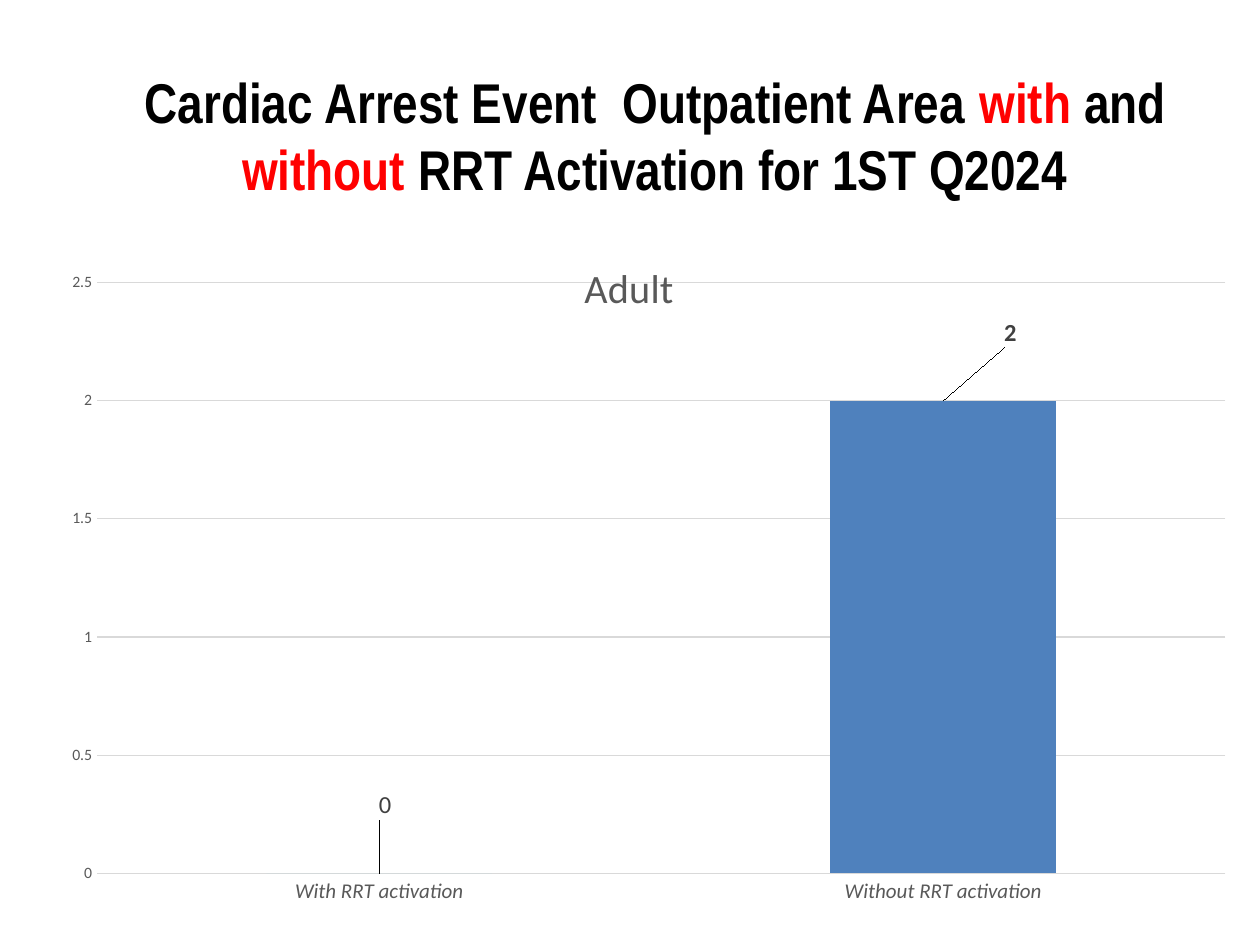
from lxml import etree
from pptx import Presentation
from pptx.chart.data import CategoryChartData
from pptx.dml.color import RGBColor
from pptx.enum.chart import XL_CHART_TYPE as ChartType
from pptx.enum.chart import XL_LABEL_POSITION as LabelPosition
from pptx.enum.chart import XL_TICK_MARK as TickMark
from pptx.enum.text import MSO_ANCHOR as Anchor
from pptx.enum.text import PP_ALIGN as Align
from pptx.oxml.ns import qn
from pptx.util import Inches, Pt

BLACK, RED, GREY, DARK = "000000", "FF0000", "595959", "404040"
TITLE_RUNS = [
    ("Cardiac Arrest Event  Outpatient Area ", BLACK),
    ("with ", RED),
    ("and ", BLACK),
    ("without", RED),
    (" RRT Activation for 1ST Q2024", BLACK),
]


def color(value):
    return RGBColor.from_string(value)


def set_font(font, size, shade, name="Calibri", bold=False, italic=False):
    font.name, font.size = name, Pt(size)
    font.bold, font.italic = bold, italic
    font.color.rgb = color(shade)


def set_layout(element, index, **settings):
    """Give a chart part a manual layout as its child number index."""
    for old in element.findall(qn("c:layout")):
        element.remove(old)
    layout = etree.Element(qn("c:layout"))
    manual = etree.SubElement(layout, qn("c:manualLayout"))
    for tag, value in settings.items():
        etree.SubElement(manual, qn(f"c:{tag}")).set("val", str(value))
    element.insert(index, layout)


def format_title(title):
    title.left, title.top = Inches(0.67), Inches(0.52)
    title.width, title.height = Inches(9.06), Inches(1.1)
    frame = title.text_frame
    frame.word_wrap = True
    frame.vertical_anchor = Anchor.MIDDLE
    para = frame.paragraphs[0]
    para.alignment = Align.CENTER
    for text, shade in TITLE_RUNS:
        span = para.add_run()
        span.text = text
        set_font(span.font, 32, shade, "Arial Narrow", bold=True)


def format_axis(axis, size, italic=False):
    axis.major_tick_mark = axis.minor_tick_mark = TickMark.NONE
    axis.format.line.fill.background()
    set_font(axis.tick_labels.font, size, GREY, italic=italic)


def format_label(series, index, shift, bold):
    label = series.points[index].data_label
    set_font(label.font, 14, DARK, bold=bold)
    label.position = LabelPosition.OUTSIDE_END
    # The element that holds this point's label
    element = series.data_labels._element.findall(qn("c:dLbl"))[index]
    set_layout(element, 1, x=shift, y=-0.07)


def add_activation_chart(page):
    data = CategoryChartData()
    data.categories = ["With RRT activation", "Without RRT activation"]
    data.add_series("Series 1", [0, 2])
    chart = page.shapes.add_chart(
        ChartType.COLUMN_CLUSTERED, Inches(0.2), Inches(1.78),
        Inches(9.53), Inches(5.43), data).chart
    chart.has_legend = False
    set_font(chart.font, 10, BLACK)

    # Chart title and plot area
    chart.has_title = True
    para = chart.chart_title.text_frame.paragraphs[0]
    para.text = "Adult"
    set_font(para.runs[0].font, 23, GREY)
    set_layout(chart.chart_title._element, 1,
               xMode="edge", yMode="edge", x=0.46, y=0.04)
    plot_area = chart._chartSpace.chart.plotArea
    set_layout(plot_area, 0, layoutTarget="inner", xMode="edge", yMode="edge",
               x=0.06, y=0.085, w=0.94, h=0.864)

    # Axes
    format_axis(chart.category_axis, 12, italic=True)
    value_axis = chart.value_axis
    format_axis(value_axis, 9)
    value_axis.minimum_scale, value_axis.maximum_scale = 0, 2.5
    value_axis.major_unit = 0.5
    grid = value_axis.major_gridlines.format.line
    grid.width = Pt(0.75)
    grid.color.rgb = color("D9D9D9")

    # Columns and their labels
    plot = chart.plots[0]
    plot.gap_width = 150
    plot.vary_by_categories = False
    series = plot.series[0]
    for index, shade in enumerate(["B7DEE8", "4F81BD"]):
        fill = series.points[index].format.fill
        fill.solid()
        fill.fore_color.rgb = color(shade)
    series.format.fill.solid()
    series.format.fill.fore_color.rgb = color("4F81BD")
    series.data_labels.show_value = True
    set_font(series.data_labels.font, 14, DARK, bold=True)
    format_label(series, 0, 0.005, bold=False)
    format_label(series, 1, 0.056, bold=True)


def main():
    deck = Presentation()
    deck.slide_width, deck.slide_height = Inches(10), Inches(7.5)
    page = deck.slides.add_slide(deck.slide_layouts[5])
    format_title(page.shapes.title)
    add_activation_chart(page)
    deck.save("out.pptx")


if __name__ == "__main__":
    main()
